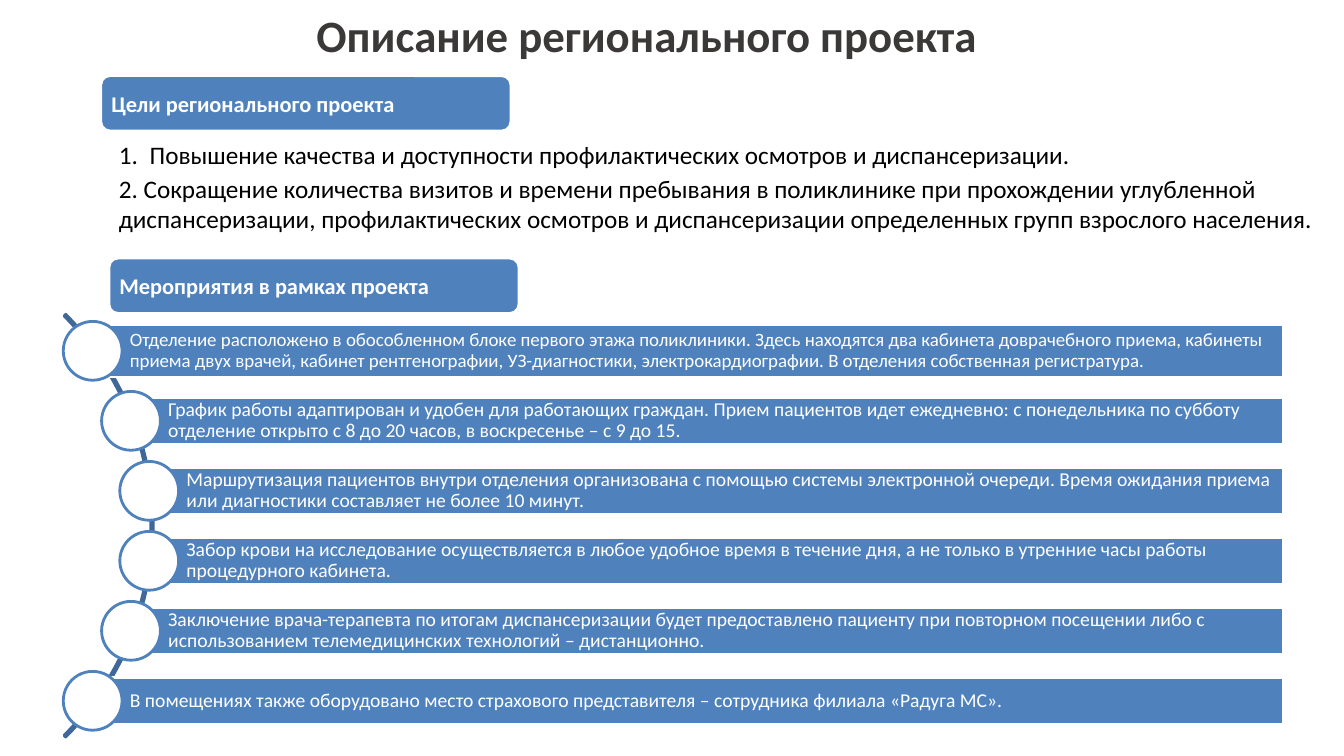
from pptx import Presentation
from pptx.dml.color import RGBColor
from pptx.enum.shapes import MSO_SHAPE as Shape
from pptx.enum.text import MSO_ANCHOR as Anchor, PP_ALIGN as Align
from pptx.util import Pt

BLUE = RGBColor(0x4F, 0x81, 0xBD)
DARK_BLUE = RGBColor(0x3F, 0x67, 0x97)
WHITE = RGBColor(0xFF, 0xFF, 0xFF)
BLACK = RGBColor(0x00, 0x00, 0x00)
GREY = RGBColor(0x3B, 0x38, 0x38)

# Left edge of each bar, text size, bar height, text
ACTIVITIES = [
    (66.2, 13.5, 37.4,
     "Отделение расположено в обособленном блоке первого этажа поликлиники. "
     "Здесь находятся два кабинета доврачебного приема, кабинеты приема двух врачей, "
     "кабинет рентгенографии, УЗ-диагностики, электрокардиографии. "
     "В отделения собственная регистратура."),
    (93.6, 14, 33.4,
     "График работы адаптирован и удобен для работающих граждан. Прием пациентов идет "
     "ежедневно: с понедельника по субботу отделение открыто с 8 до 20 часов, "
     "в воскресенье – с 9 до 15."),
    (106.6, 14, 33.4,
     "Маршрутизация пациентов внутри отделения организована с помощью системы электронной "
     "очереди. Время ожидания приема или диагностики составляет не более 10 минут."),
    (106.6, 14, 33.4,
     "Забор крови на исследование осуществляется в любое удобное время в течение дня, "
     "а не только в утренние часы работы процедурного кабинета."),
    (93.6, 14, 33.4,
     "Заключение врача-терапевта по итогам диспансеризации будет предоставлено пациенту "
     "при повторном посещении либо с использованием телемедицинских технологий – дистанционно."),
    (66.2, 14, 33.4,
     "В помещениях также оборудовано место страхового представителя – "
     "сотрудника филиала «Радуга МС»."),
]
FIRST_CENTER, ROW_STEP = 250.6, 50
BAR_RIGHT, CIRCLE_SIZE = 916.9, 42


class SlideBuilder:
    def __init__(self, slide, font_name="Calibri", line_width=2):
        self.slide = slide
        self.font_name = font_name
        self.line_width = line_width

    def shape(self, kind, box, fill, line):
        """Add a preset shape; a fill of None leaves it unfilled."""
        shape = self.slide.shapes.add_shape(kind, *map(Pt, box))
        shape.shadow.inherit = False
        if fill is None:
            shape.fill.background()
        else:
            shape.fill.solid()
            shape.fill.fore_color.rgb = fill
        shape.line.color.rgb = line
        shape.line.width = Pt(self.line_width)
        return shape

    def put_text(self, shape, text, size, color, bold=False, align=Align.LEFT,
                 anchor=Anchor.TOP, margins=(7.2, 3.6, 7.2, 3.6), spacing=1.0):
        frame = shape.text_frame
        left, top, right, bottom = map(Pt, margins)
        frame_format = {"word_wrap": True, "vertical_anchor": anchor,
                        "margin_left": left, "margin_top": top,
                        "margin_right": right, "margin_bottom": bottom}
        paragraph = frame.paragraphs[0]
        run = paragraph.add_run()
        run.text = text
        run.font.color.rgb = color
        for target, values in (
                (frame, frame_format),
                (paragraph, {"alignment": align, "line_spacing": spacing}),
                (run.font, {"name": self.font_name, "size": Pt(size), "bold": bold})):
            for name, value in values.items():
                setattr(target, name, value)
        return paragraph

    def text(self, box, text, size, color, **style):
        textbox = self.slide.shapes.add_textbox(*map(Pt, box))
        return self.put_text(textbox, text, size, color, **style)

    def heading(self, left, top, text):
        shape = self.shape(Shape.ROUNDED_RECTANGLE, (left, top, 293, 39.6), BLUE, WHITE)
        self.put_text(shape, text, 16, WHITE, bold=True, anchor=Anchor.MIDDLE,
                      margins=(5.6, 5, 5, 5))

    def arc(self, box):
        arc = self.shape(Shape.BLOCK_ARC, box, None, DARK_BLUE)
        for index, value in enumerate((189, 27, 0.004)):
            arc.adjustments[index] = value

    def activity(self, center_y, left, size, height, text):
        """Add a bar with a circle centred on its left edge."""
        bar = self.shape(Shape.RECTANGLE,
                         (left, center_y - height / 2, BAR_RIGHT - left, height),
                         BLUE, WHITE)
        self.put_text(bar, text, size, WHITE, anchor=Anchor.MIDDLE,
                      margins=(26.6, 2.8, 2.8, 2.8), spacing=0.9)
        radius = CIRCLE_SIZE / 2
        self.shape(Shape.OVAL,
                   (left - radius, center_y - radius, CIRCLE_SIZE, CIRCLE_SIZE),
                   WHITE, BLUE)


def main():
    presentation = Presentation()
    presentation.slide_width, presentation.slide_height = Pt(960), Pt(540)
    slide = presentation.slides.add_slide(presentation.slide_layouts[6])
    builder = SlideBuilder(slide)

    builder.arc((-317.5, 162, 427, 427))
    for row, activity in enumerate(ACTIVITIES):
        builder.activity(FIRST_CENTER + row * ROW_STEP, *activity)

    builder.text((138.2, 5.8, 648, 38.9), "Описание регионального проекта", 32, GREY,
                 bold=True, align=Align.CENTER, margins=(0, 0, 0, 0))
    builder.heading(72, 54, "Цели регионального проекта")
    first_goal = builder.text(
        (77.8, 95.8, 804, 29),
        "1.\tПовышение качества и доступности профилактических осмотров и диспансеризации.",
        18, BLACK)
    hanging = Pt(22)
    properties = first_goal._p.get_or_add_pPr()
    properties.set("marL", str(hanging))
    properties.set("indent", str(-hanging))
    builder.text(
        (77.8, 120.2, 870, 51),
        "2. Сокращение количества визитов и времени пребывания в поликлинике при прохождении "
        "углубленной диспансеризации, профилактических осмотров и диспансеризации "
        "определенных групп взрослого населения.",
        18, BLACK)
    builder.heading(77.8, 184.3, "Мероприятия в рамках проекта")

    presentation.save("out.pptx")


if __name__ == "__main__":
    main()
